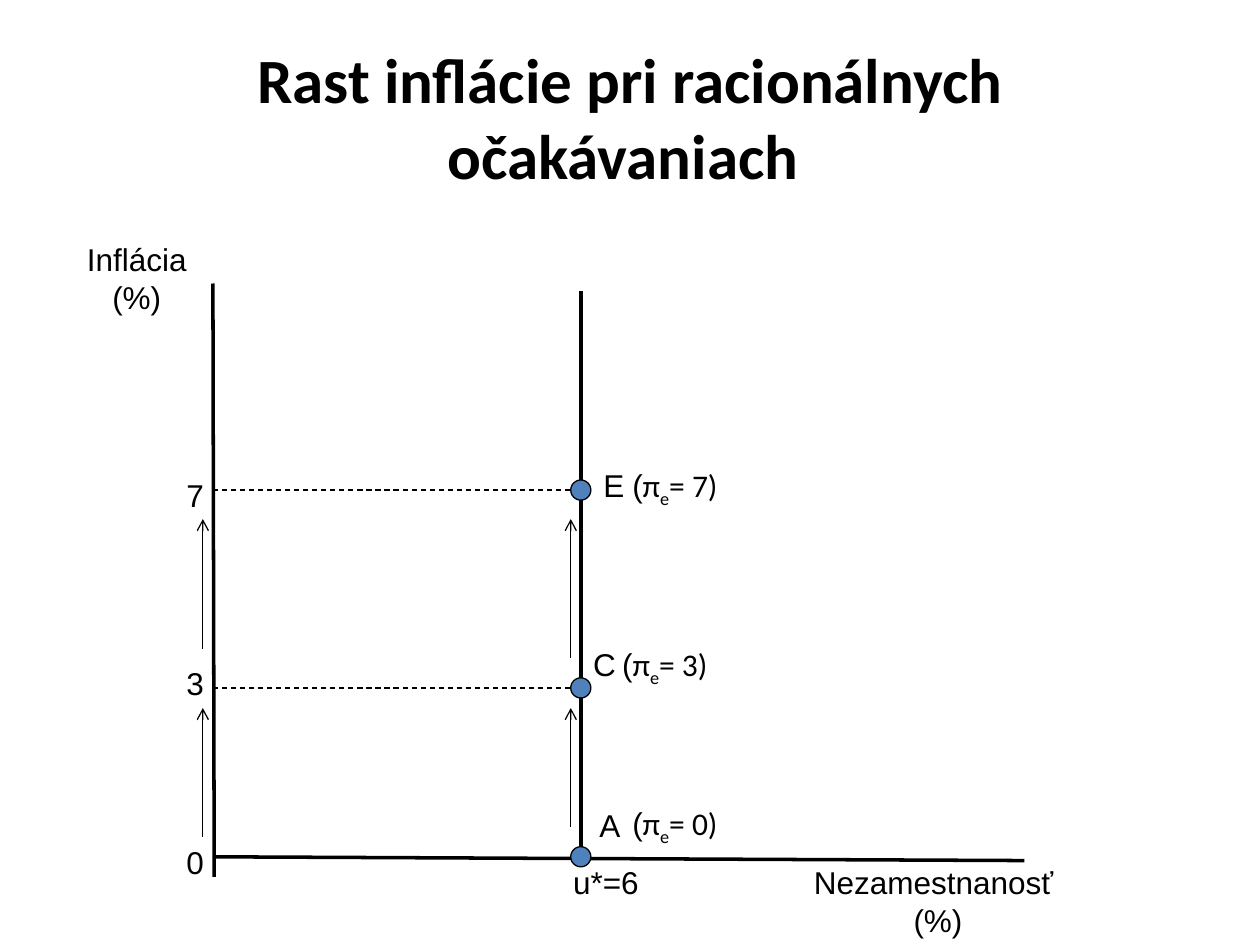
from dataclasses import dataclass
from lxml import etree
from pptx import Presentation
from pptx.dml.color import RGBColor
from pptx.enum.dml import MSO_LINE
from pptx.enum.shapes import MSO_CONNECTOR, MSO_SHAPE
from pptx.enum.text import MSO_ANCHOR, MSO_AUTO_SIZE, PP_ALIGN
from pptx.oxml.ns import qn
from pptx.util import Inches, Pt

STRAIGHT = MSO_CONNECTOR.STRAIGHT
OVAL = MSO_SHAPE.OVAL
DASH = MSO_LINE.DASH
LEFT, CENTER = PP_ALIGN.LEFT, PP_ALIGN.CENTER
MIDDLE = MSO_ANCHOR.MIDDLE
GROW = MSO_AUTO_SIZE.SHAPE_TO_FIT_TEXT


@dataclass(frozen=True)
class Theme:
    ink: RGBColor = RGBColor(0, 0, 0)
    point: RGBColor = RGBColor(0x4F, 0x81, 0xBD)
    label_font: str = "Arial"
    title_font: str = "Calibri"
    title_size: Pt = Pt(36)
    label_size: Pt = Pt(18)
    axis: Pt = Pt(2)
    thin: Pt = Pt(0.75)


theme = Theme()
prs = Presentation()
prs.slide_width, prs.slide_height = Inches(10), Inches(7.5)
slide = prs.slides.add_slide(prs.slide_layouts[5])


def add_line(x1, y1, x2, y2, width, dash=None, arrow=False):
    line = slide.shapes.add_connector(
        STRAIGHT, Inches(x1), Inches(y1), Inches(x2), Inches(y2))
    line.line.color.rgb = theme.ink
    line.line.width = width
    if dash:
        line.line.dash_style = dash
    if arrow:
        etree.SubElement(line.line._get_or_add_ln(), qn("a:tailEnd"), type="arrow")
    etree.SubElement(line._element.spPr, qn("a:effectLst"))


def add_label(x, y, width, height, paragraphs, align=LEFT, wrap=False):
    frame = slide.shapes.add_textbox(
        Inches(x), Inches(y), Inches(width), Inches(height)).text_frame
    frame.word_wrap = wrap
    frame.auto_size = GROW
    for index, pieces in enumerate(paragraphs):
        paragraph = frame.paragraphs[0] if index == 0 else frame.add_paragraph()
        paragraph.alignment = align
        for text, font, baseline in pieces:
            run = paragraph.add_run()
            run.text = text
            run.font.name = font
            run.font.size = theme.label_size
            run.font.color.rgb = theme.ink
            if baseline:
                run.font._element.set("baseline", str(baseline))


title = slide.shapes.title
title.left, title.top = Inches(0.5), Inches(0.3)
title.width, title.height = Inches(9), Inches(1.25)
title.text_frame.vertical_anchor = MIDDLE
heading = title.text_frame.paragraphs[0]
heading.alignment = CENTER
heading_run = heading.add_run()
heading_run.text = "Rast inflácie pri racionálnych očakávaniach "
heading_run.font.name = theme.title_font
heading_run.font.size = theme.title_size
heading_run.font.bold = True
heading_run.font.color.rgb = theme.ink

axis_x, natural_rate_x, dot = 1.69, 4.61, 0.16
dot_left = natural_rate_x - dot / 2

add_line(axis_x, 2.25, 1.7, 6.96, theme.axis)
add_line(axis_x, 6.8, 8.13, 6.83, theme.axis)
add_line(natural_rate_x, 2.31, natural_rate_x, 6.8, theme.axis)

for inflation_y in (3.89, 5.46):
    add_line(axis_x, inflation_y, dot_left, inflation_y, theme.thin, dash=DASH)

for rise_x, start_y, end_y in (
    (1.61, 6.64, 5.62),
    (1.61, 5.15, 4.12),
    (dot_left, 6.56, 5.62),
    (dot_left, 5.22, 4.12),
):
    add_line(rise_x, start_y, rise_x, end_y, theme.thin, arrow=True)

for inflation, point_y, tick_y, name, name_x, name_y, expected_x, expected_y in (
    ("7", 3.89, 3.73, "E", 4.69, 3.65, 4.92, 3.65),
    ("3", 5.46, 5.22, "C", 4.61, 5.07, 4.84, 5.07),
    ("0", 6.8, 6.64, "A", 4.66, 6.35, 4.92, 6.33),
):
    point = slide.shapes.add_shape(
        OVAL, Inches(dot_left), Inches(point_y - dot / 2), Inches(dot), Inches(dot))
    point.shadow.inherit = False
    point.fill.solid()
    point.fill.fore_color.rgb = theme.point
    point.line.color.rgb = theme.ink
    point.line.width = theme.thin
    add_label(1.38, tick_y, 0.31, 0.4, [[(inflation, theme.label_font, 0)]], wrap=True)
    add_label(name_x, name_y, 0.37, 0.4, [[(name, theme.label_font, 0)]])
    add_label(expected_x, expected_y, 0.9, 0.4, [[
        ("(", theme.label_font, 0),
        ("π", theme.title_font, 0),
        ("e", theme.title_font, -25000),
        (f"= {inflation})", theme.title_font, 0),
    ]])

unit = [("(%)", theme.label_font, 0)]
add_label(0.59, 1.86, 0.99, 0.7,
          [[("Inflácia", theme.label_font, 0)], unit], CENTER)
add_label(6.26, 6.8, 2.37, 0.7,
          [[("Nezamestnanosť ", theme.label_font, 0)], unit], CENTER, wrap=True)
add_label(4.45, 6.8, 0.95, 0.4, [[("u*=6", theme.label_font, 0)]], wrap=True)

prs.save("out.pptx")
